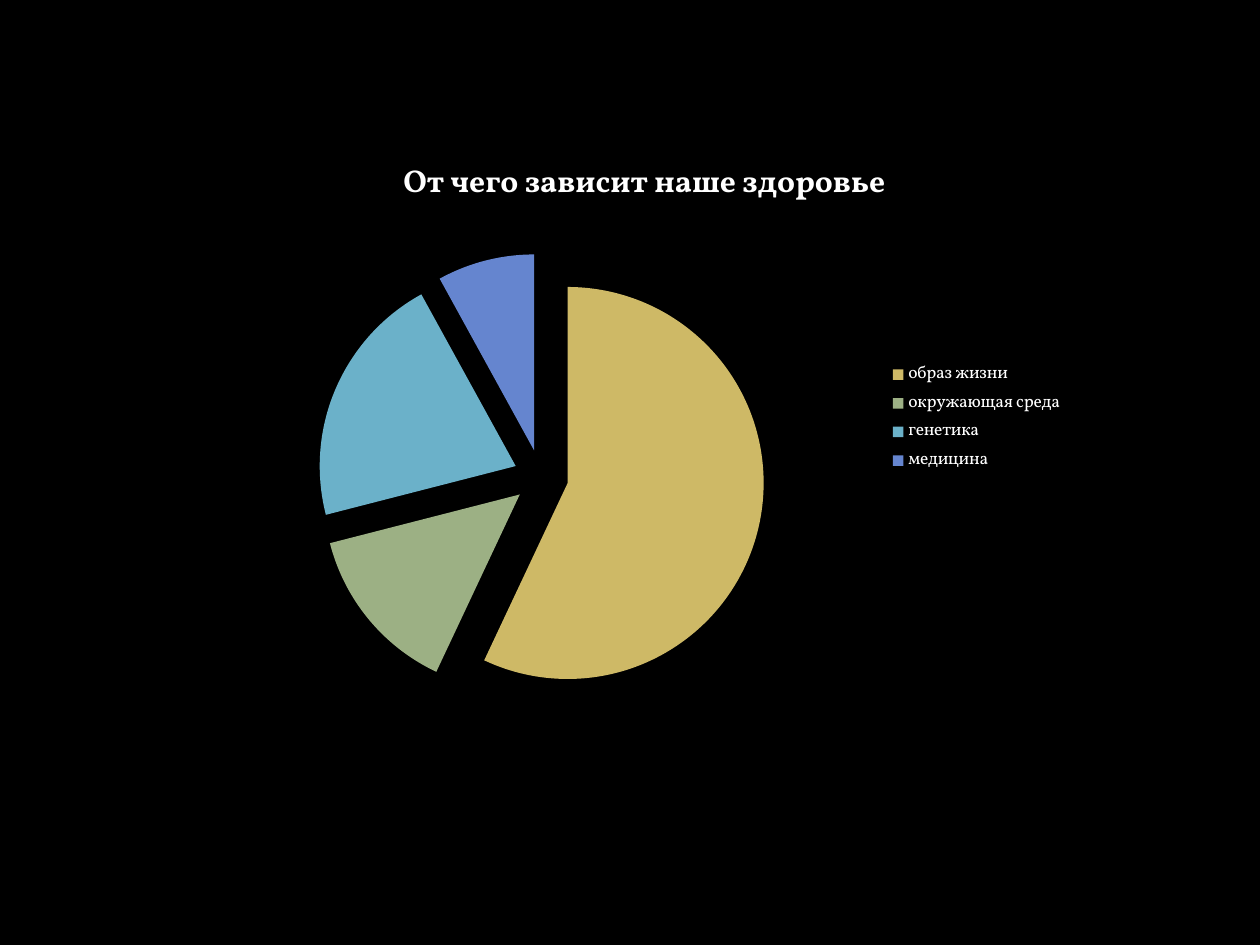
from lxml import etree
from pptx import Presentation
from pptx.chart.data import CategoryChartData
from pptx.dml.color import RGBColor
from pptx.enum.chart import XL_CHART_TYPE, XL_LEGEND_POSITION
from pptx.oxml.ns import qn
from pptx.util import Inches, Pt

TITLE = "От чего зависит наше здоровье"
FACTORS = [
    ("образ жизни", 57, "CEB966"),
    ("окружающая среда", 14, "9CB084"),
    ("генетика", 21, "6BB1C9"),
    ("медицина", 8, "6585CF"),
]
FONT = "Vollkorn"
BACKGROUND, TEXT = "000000", "FFFFFF"
CHART_BOX = (1.69, 1.07, 6.85, 4.49)
PLOT_SHARES = {"x": 0.03, "y": 0.21, "w": 0.7, "h": 0.79}
EXPLOSION = 14


def color(hex_code):
    return RGBColor.from_string(hex_code)


def style_font(font, size, bold):
    font.name, font.size, font.bold = FONT, Pt(size), bold
    font.color.rgb = color(TEXT)


def place_plot(chart):
    """Fix the inner plot area to shares of the chart's size."""
    plot_area = chart._chartSpace.chart.plotArea
    for old_layout in plot_area.findall(qn("c:layout")):
        plot_area.remove(old_layout)
    layout = etree.Element(qn("c:layout"))
    manual = etree.SubElement(layout, qn("c:manualLayout"))
    settings = {"layoutTarget": "inner", "xMode": "edge", "yMode": "edge", **PLOT_SHARES}
    for name, value in settings.items():
        etree.SubElement(manual, qn(f"c:{name}")).set("val", str(value))
    plot_area.insert(0, layout)


def explode(series):
    """Pull all slices away from the centre."""
    explosion = etree.Element(qn("c:explosion"))
    explosion.set("val", str(EXPLOSION))
    series._element.find(qn("c:dPt")).addprevious(explosion)


def add_pie(slide):
    names, values, fills = zip(*FACTORS)
    data = CategoryChartData()
    data.categories = names
    data.add_series(TITLE, values)
    box = [Inches(length) for length in CHART_BOX]
    chart = slide.shapes.add_chart(XL_CHART_TYPE.PIE, *box, data).chart

    style_font(chart.font, 10, False)
    chart.has_title = True
    title = chart.chart_title.text_frame
    title.text = TITLE
    style_font(title.paragraphs[0].font, 18, True)

    chart.has_legend = True
    chart.legend.position = XL_LEGEND_POSITION.RIGHT
    chart.legend.include_in_layout = False

    plot = chart.plots[0]
    plot.vary_by_categories = True
    series = plot.series[0]
    for index, fill in enumerate(fills):
        slice_format = series.points[index].format
        slice_format.fill.solid()
        slice_format.fill.fore_color.rgb = color(fill)
        slice_format.line.fill.background()
    explode(series)
    place_plot(chart)


def main():
    presentation = Presentation()
    presentation.slide_width, presentation.slide_height = Inches(10), Inches(7.5)
    slide = presentation.slides.add_slide(presentation.slide_layouts[6])
    slide.background.fill.solid()
    slide.background.fill.fore_color.rgb = color(BACKGROUND)
    add_pie(slide)
    presentation.save("out.pptx")


if __name__ == "__main__":
    main()
